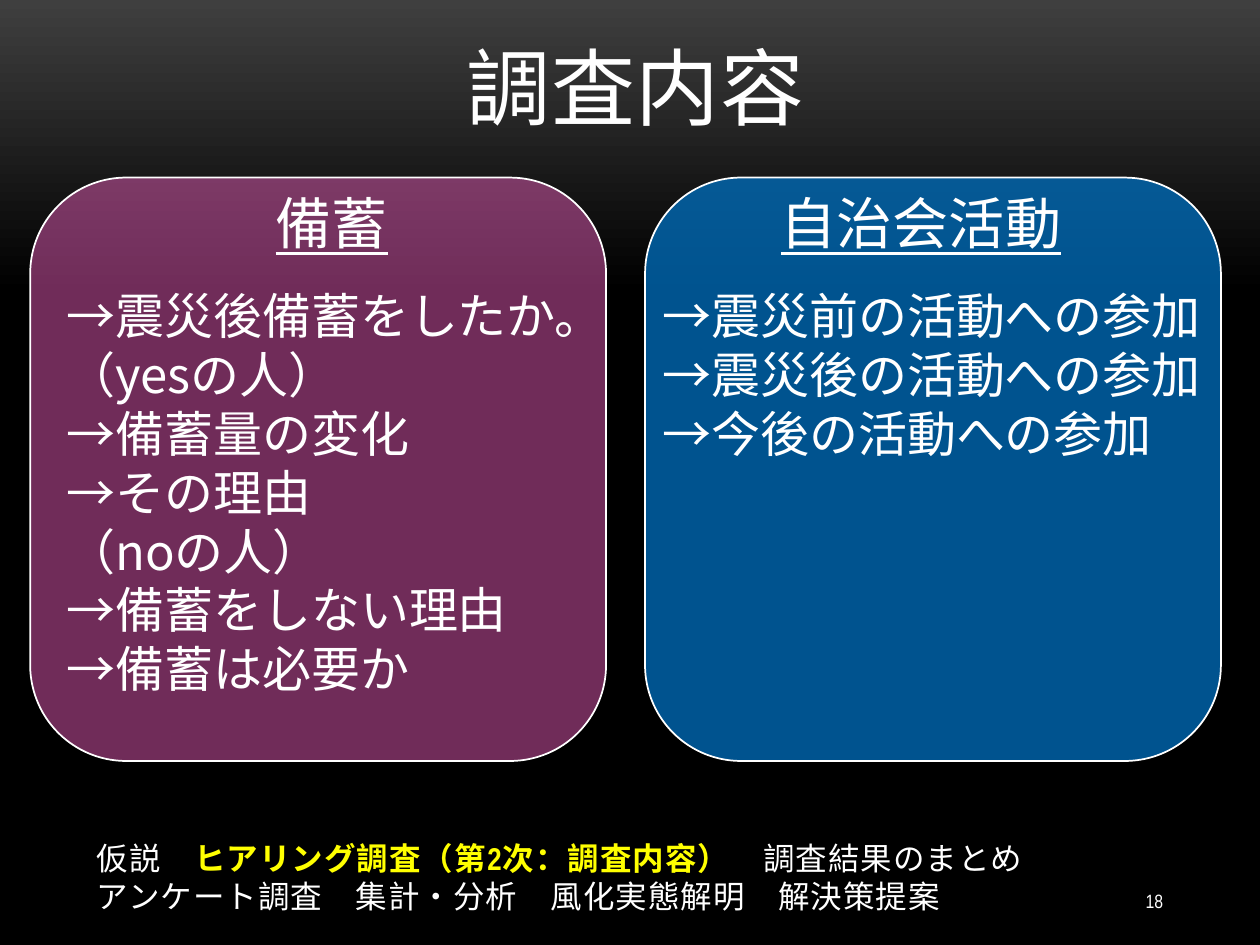
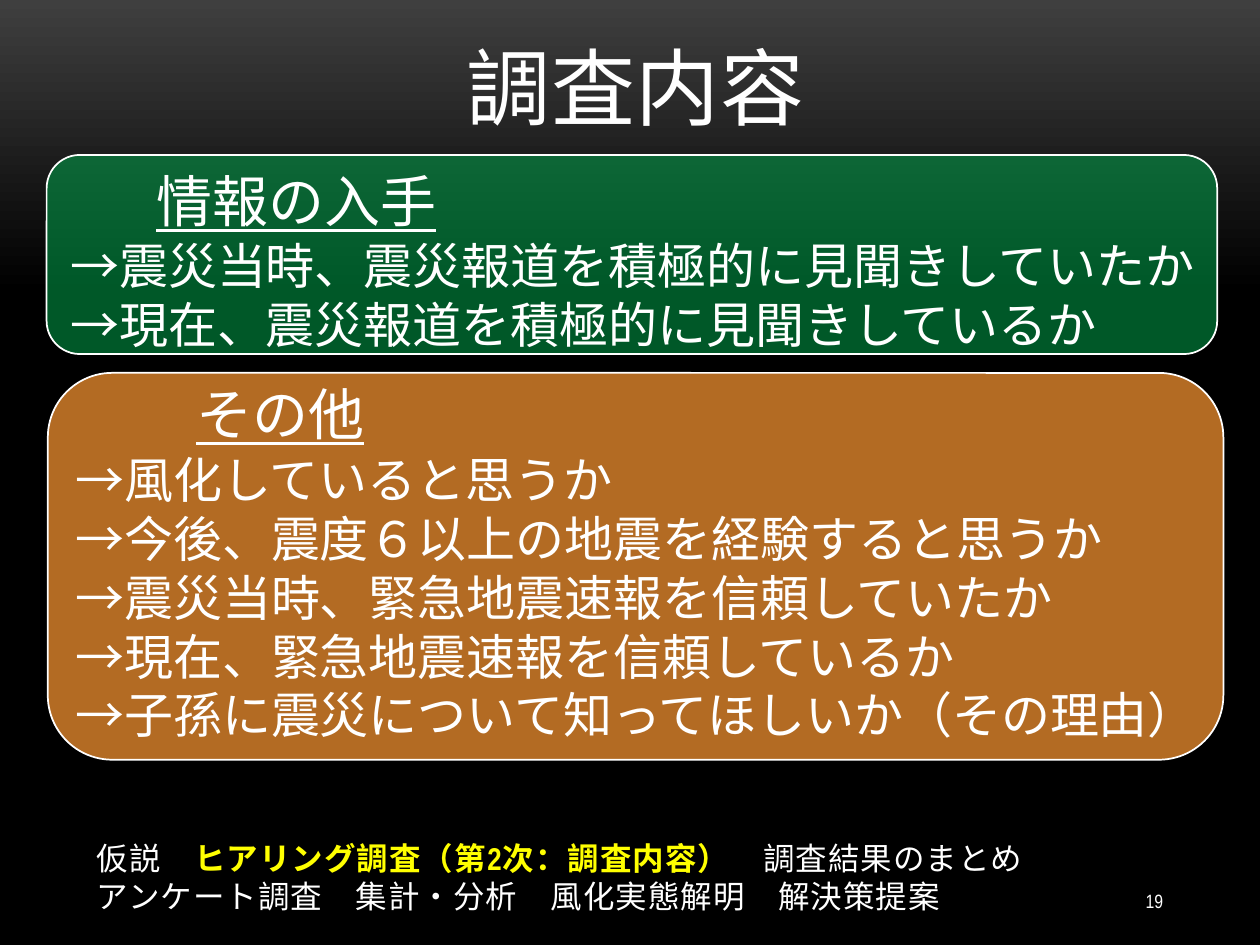
from dataclasses import dataclass

from lxml.etree import SubElement
from pptx import Presentation
from pptx.dml.color import RGBColor
from pptx.enum.shapes import MSO_SHAPE as Shape
from pptx.enum.text import MSO_ANCHOR as Anchor, PP_ALIGN as Align
from pptx.oxml.ns import qn
from pptx.util import Inches, Pt


@dataclass(frozen=True)
class Theme:
    """Colours, fonts and type sizes shared by the slides."""
    white: str = "FFFFFF"
    black: str = "000000"
    glow: str = "3F3F3F"
    current: str = "FFFF00"
    pink: str = "FF66CC"
    blue: str = "0070C0"
    green: str = "00B050"
    orange: str = "FF9933"
    body_font: str = "Noto Sans CJK JP"
    footer_font: str = "Arial Narrow"
    title_size: int = 48
    heading_size: int = 32
    body_size: int = 28
    footer_size: int = 18
    number_size: int = 11
    leading: float = 1.2


@dataclass(frozen=True)
class Panel:
    """A coloured topic panel; text boxes are relative to its corner."""
    box: tuple
    color: str
    opacity: int
    heading: str
    heading_box: tuple
    lines: tuple
    lines_box: tuple


T = Theme()
TITLE = "調査内容"
STEPS = (
    (("仮説　", False), ("ヒアリング調査（第2次：調査内容）", True), ("　調査結果のまとめ", False)),
    (("アンケート調査　集計・分析　風化実態解明　解決策提案", False),),
)
STOCK = Panel(
    (0.24, 1.41, 4.57, 4.63), T.pink, 44,
    "備蓄", (1.85, 0, 1.26, 0.64),
    ("→震災後備蓄をしたか。", "（yesの人）", "→備蓄量の変化", "→その理由",
     "（noの人）", "→備蓄をしない理由", "→備蓄は必要か"),
    (0.19, 0.77, 4.57, 3.4))
COMMUNITY = Panel(
    (5.12, 1.41, 4.57, 4.63), T.blue, 75,
    "自治会活動", (0.98, 0, 2.6, 0.64),
    ("→震災前の活動への参加", "→震災後の活動への参加", "→今後の活動への参加"),
    (0.04, 0.77, 4.57, 1.51))
INFORMATION = Panel(
    (0.37, 1.23, 9.29, 1.58), T.green, 50,
    "情報の入手", (0.77, 0, 3.23, 0.64),
    ("→震災当時、震災報道を積極的に見聞きしていたか",
     "→現在、震災報道を積極的に見聞きしているか"),
    (0.09, 0.55, 9.17, 1.04))
OTHERS = Panel(
    (0.38, 2.96, 9.33, 3.07), T.orange, 70,
    "その他", (1.08, -0.04, 1.65, 0.64),
    ("→風化していると思うか", "→今後、震度６以上の地震を経験すると思うか",
     "→震災当時、緊急地震速報を信頼していたか", "→現在、緊急地震速報を信頼しているか",
     "→子孫に震災について知ってほしいか（その理由）"),
    (0.12, 0.52, 9.17, 2.46))


def rgb(color):
    """Turn a hex string into a colour."""
    return RGBColor.from_string(color)


def style_run(r, size, font=T.body_font, color=T.white, spacing=0):
    """Set the size, fonts, colour and letter spacing of a run."""
    r.font.size = Pt(size)
    r.font.color.rgb = rgb(color)
    r.font.name = font
    rPr = r.font._element
    SubElement(rPr, qn("a:ea")).set("typeface", T.body_font)
    if spacing:
        rPr.set("spc", str(round(spacing * 100)))


def add_text(s, box, lines, size, anchor=Anchor.TOP, align=Align.LEFT,
             top=0.05, bottom=0.05, **style):
    """Add a text box whose lines are tuples of strings and return it."""
    tf = s.shapes.add_textbox(*map(Inches, box)).text_frame
    tf.word_wrap = True
    tf.vertical_anchor = anchor
    tf.margin_top, tf.margin_bottom = Inches(top), Inches(bottom)
    tf.margin_right = 0 if align == Align.LEFT else Inches(0.1)
    for i, line in enumerate(lines):
        p = tf.add_paragraph() if i else tf.paragraphs[0]
        p.alignment = align
        p.line_spacing = Pt(size * T.leading)
        for text in line:
            r = p.add_run()
            r.text = text
            style_run(r, size, **style)
    return tf


def add_background(s):
    """Fill the slide with a grey glow that fades down to black."""
    fill = s.background.fill
    fill.gradient()
    fill.gradient_angle = 270
    for stop, color, position in zip(fill.gradient_stops, (T.glow, T.black), (0, 0.31)):
        stop.color.rgb = rgb(color)
        stop.position = position


def add_title(s, box):
    """Add the centred slide title."""
    add_text(s, box, [(TITLE,)], T.title_size, Anchor.BOTTOM, Align.CENTER,
             bottom=0, spacing=0.5)


def add_footer(s, box, number_box, number):
    """Add the step list with the current step marked, and the slide number."""
    tf = add_text(s, box, [[text for text, _ in line] for line in STEPS],
                  T.footer_size, Anchor.MIDDLE, font=T.footer_font, spacing=0.6)
    for p, line in zip(tf.paragraphs, STEPS):
        for r, (_, is_current) in zip(p.runs, line):
            if is_current:
                r.font.bold = True
                r.font.color.rgb = rgb(T.current)
    add_text(s, number_box, [(str(number),)], T.number_size, Anchor.MIDDLE,
             Align.RIGHT, font=T.footer_font)


def add_panel(s, panel):
    """Add a translucent rounded panel with its heading and lines."""
    left, top, width, height = panel.box
    sp = s.shapes.add_shape(Shape.ROUNDED_RECTANGLE, *map(Inches, panel.box))
    sp.shadow.inherit = False
    sp.fill.solid()
    sp.fill.fore_color.rgb = rgb(panel.color)
    clr = sp._element.spPr.find(qn("a:solidFill"))[0]
    SubElement(clr, qn("a:alpha")).set("val", str(panel.opacity * 1000))
    sp.line.color.rgb = rgb(T.white)
    sp.line.width = Pt(1)

    def inside(box):
        """Move a box from panel to slide coordinates."""
        x, y, w, h = box
        return left + x, top + y, w, h

    tf = add_text(s, inside(panel.heading_box), [(panel.heading,)],
                  T.heading_size, top=0.09)
    tf.paragraphs[0].runs[0].font.underline = True
    add_text(s, inside(panel.lines_box), [(line,) for line in panel.lines],
             T.body_size, top=0.09)


def add_survey_slide(prs, number, panels):
    """Add one survey slide with its panels."""
    s = prs.slides.add_slide(prs.slide_layouts[6])
    add_background(s)
    add_title(s, (0.71, 0.29, 8.67, 0.79))
    for panel in panels:
        add_panel(s, panel)
    add_footer(s, (0.67, 6.51, 9.06, 0.9), (8.25, 6.95, 1.08, 0.4), number)


def main():
    """Build and save the presentation."""
    prs = Presentation()
    prs.slide_width, prs.slide_height = Inches(10), Inches(7.5)
    add_survey_slide(prs, 18, (STOCK, COMMUNITY))
    add_survey_slide(prs, 19, (OTHERS, INFORMATION))
    prs.save("out.pptx")


if __name__ == "__main__":
    main()
